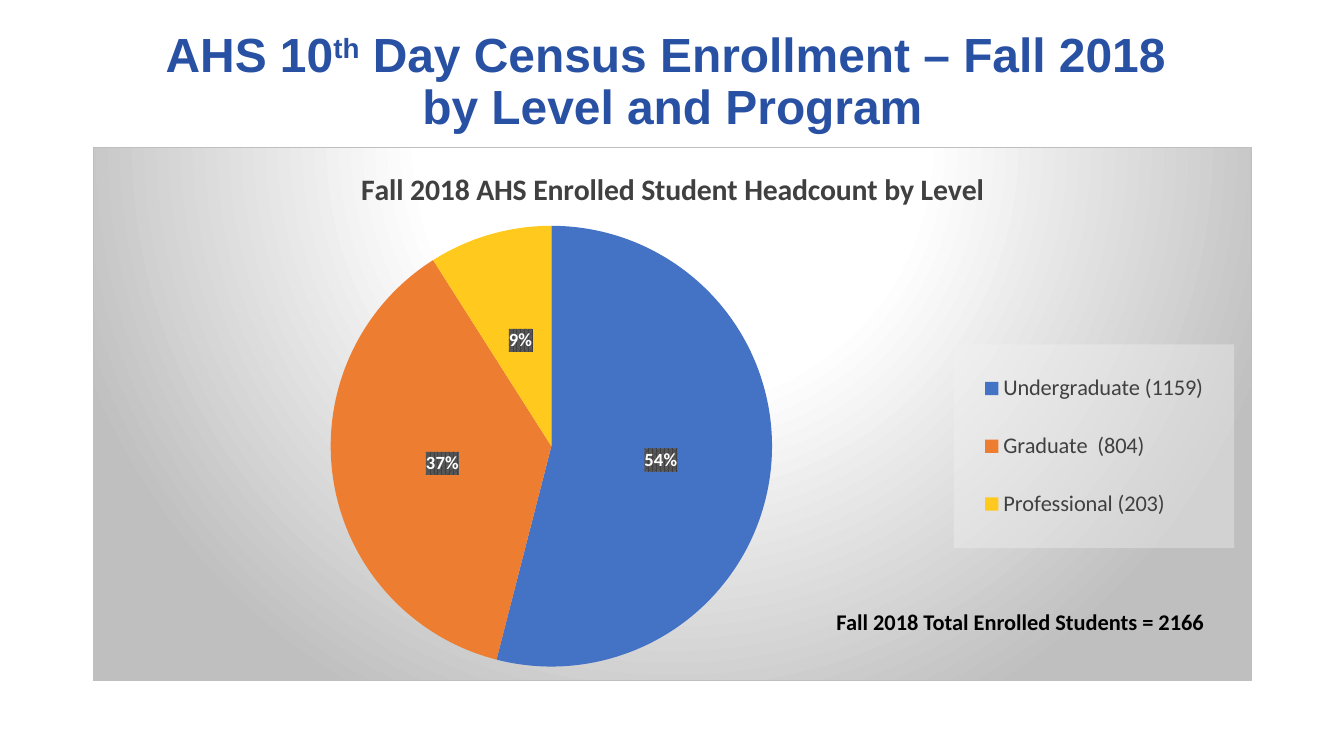
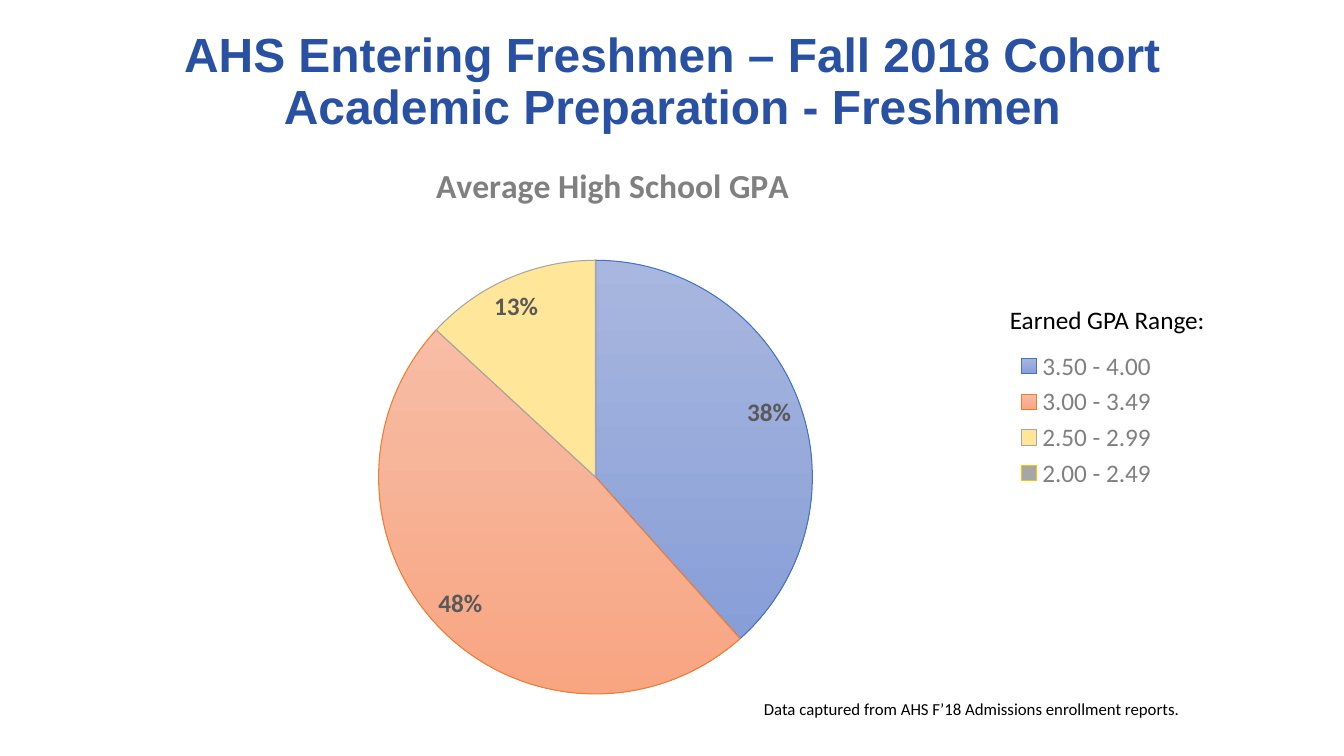
from dataclasses import dataclass
from typing import Optional

from lxml import etree
from pptx import Presentation
from pptx import util as u
from pptx.chart import data as cd
from pptx.dml import color as dc
from pptx.enum import chart as ec, text as et

WIDE, HIGH = u.Inches(13.33), u.Inches(7.5)
HUES = {
    "title": "2850A3", "black": "000000", "white": "FFFFFF", "dark": "404040",
    "slate": "595959", "gray": "808080", "ash": "A6A6A6", "steel": "A5A5A5",
    "silver": "BFBFBF", "mist": "F2F2F2", "blue": "4472C4", "orange": "ED7D31",
    "yellow": "FFC91D", "gold": "FFC000", "cream": "FFE699",
    "sky": "A8B7DF", "dusk": "889ED7", "blush": "F7BDA5", "coral": "F8A582",
}
SPACES = ('xmlns:c="http://schemas.openxmlformats.org/drawingml/2006/chart" '
          'xmlns:a="http://schemas.openxmlformats.org/drawingml/2006/main"')


@dataclass(frozen=True)
class Box:
    """Left, top, width and height in percent of the host's size."""
    x: float
    y: float
    w: float
    h: float

    def spot(self) -> tuple[int, int, int, int]:
        return (int(WIDE * self.x / 100), int(HIGH * self.y / 100),
                int(WIDE * self.w / 100), int(HIGH * self.h / 100))


@dataclass(frozen=True)
class Type:
    size: float
    hue: str
    bold: bool = False
    face: str = "Calibri"


@dataclass(frozen=True)
class Slice:
    name: str
    value: int
    fill: tuple[str, ...]
    edge: Optional[str] = None


@dataclass(frozen=True)
class Pie:
    box: Box
    title: str
    head: Type
    slices: tuple[Slice, ...]
    plot: Box
    key: Box
    legend: Type
    label: Type
    place: ec.XL_LABEL_POSITION
    top: Optional[Box] = None
    shaded: bool = False


@dataclass(frozen=True)
class Note:
    box: Box
    words: str
    type: Type


@dataclass(frozen=True)
class Page:
    title: tuple[tuple[str, bool], ...]
    pie: Pie
    notes: tuple[Note, ...]


TITLE_BOX = Box(6.9, 5.33, 86.27, 11.33)
TITLE_TYPE = Type(34.2, "title", True, "Arial")

PAGES = (
    Page(
        (("AHS 10", False), ("th", True),
         (" Day Census Enrollment – Fall 2018 \vby Level and Program", False)),
        Pie(
            Box(6.9, 19.47, 86.27, 70.67),
            "Fall 2018 AHS Enrolled Student Headcount by Level",
            Type(21.3, "dark", True),
            (Slice("Undergraduate (1159)", 54, ("blue",)),
             Slice("Graduate  (804)", 37, ("orange",)),
             Slice("Professional (203)", 9, ("yellow",))),
            plot=Box(20.5, 14.6, 38.1, 82.8),
            key=Box(74.3, 36.9, 24.2, 38.2),
            legend=Type(16, "dark"),
            label=Type(13.3, "white", True),
            place=ec.XL_LABEL_POSITION.CENTER,
            shaded=True),
        (Note(Box(61.5, 79.73, 30.75, 4.93),
              "Fall 2018 Total Enrolled Students = 2166", Type(16, "black", True)),)),
    Page(
        (("AHS Entering Freshmen – Fall 2018 Cohort Academic Preparation - Freshmen",
          False),),
        Pie(
            Box(7.28, 18.8, 85.52, 74.8),
            "Average High School GPA",
            Type(24, "gray", True),
            (Slice("3.50 - 4.00", 38, ("sky", "dusk"), "blue"),
             Slice("3.00 - 3.49", 48, ("blush", "coral"), "orange"),
             Slice("2.50 - 2.99", 13, ("cream",), "steel"),
             Slice("2.00 - 2.49", 0, ("ash",), "gold")),
            plot=Box(24.4, 20.9, 37.8, 76.7),
            key=Box(78.5, 36, 15, 26.2),
            legend=Type(18, "gray"),
            label=Type(18, "slate", True),
            place=ec.XL_LABEL_POSITION.BEST_FIT,
            top=Box(28.9, 2.6, 0, 0)),
        (Note(Box(56.1, 91.73, 33, 4),
              "Data captured from AHS F’18 Admissions enrollment reports.",
              Type(12, "black")),
         Note(Box(74.4, 39.6, 18.3, 9.47), "Earned GPA Range:", Type(18, "black")))),
)


def tint(hue: str) -> dc.RGBColor:
    return dc.RGBColor.from_string(HUES[hue])


def style(font, kind: Type) -> None:
    font.name, font.size, font.bold = kind.face, u.Pt(kind.size), kind.bold
    font.color.rgb = tint(kind.hue)


def paint(body: str):
    return etree.fromstring(f"<c:spPr {SPACES}>{body}</c:spPr>")


def solid(hue: str, alpha: int = 100) -> str:
    return (f'<a:solidFill><a:srgbClr val="{HUES[hue]}">'
            f'<a:alpha val="{alpha * 1000}"/></a:srgbClr></a:solidFill>')


def seat(owner, after: Optional[str], box: Box, inner: bool = False) -> None:
    for old in owner.xpath("c:layout"):
        owner.remove(old)
    parts = [("layoutTarget", "inner")] if inner else []
    parts += [("xMode", "edge"), ("yMode", "edge"), ("x", box.x / 100), ("y", box.y / 100)]
    if box.w:
        parts += [("w", box.w / 100), ("h", box.h / 100)]
    body = "".join(f'<c:{tag} val="{val}"/>' for tag, val in parts)
    node = etree.fromstring(
        f"<c:layout {SPACES}><c:manualLayout>{body}</c:manualLayout></c:layout>")
    owner.insert(owner.index(owner.xpath(after)[0]) + 1 if after else 0, node)


def shade(root) -> None:
    stops = "".join(f'<a:gs pos="{at * 1000}"><a:srgbClr val="{HUES[hue]}"/></a:gs>'
                    for at, hue in ((0, "white"), (39, "white"), (100, "silver")))
    root.xpath("c:chart")[0].addnext(paint(
        f'<a:gradFill><a:gsLst>{stops}</a:gsLst><a:path path="circle">'
        '<a:fillToRect l="50000" t="-80000" r="50000" b="180000"/></a:path></a:gradFill>'
        f'<a:ln w="9525">{solid("silver")}</a:ln>'))
    root.xpath(".//c:legend/c:overlay")[0].addnext(paint(solid("mist", 39)))
    root.xpath(".//c:dLbls/c:txPr")[0].addprevious(paint(
        f'<a:pattFill prst="pct75"><a:fgClr><a:srgbClr val="{HUES["dark"]}"/></a:fgClr>'
        f'<a:bgClr><a:srgbClr val="{HUES["slate"]}"/></a:bgClr></a:pattFill>'))


def color(point, part: Slice) -> None:
    fill, line = point.format.fill, point.format.line
    if len(part.fill) > 1:
        fill.gradient()
        fill.gradient_angle = 270
        for stop, hue in zip(fill.gradient_stops, part.fill):
            stop.color.rgb = tint(hue)
    else:
        fill.solid()
        fill.fore_color.rgb = tint(part.fill[0])
    if part.edge:
        line.color.rgb = tint(part.edge)
        line.width = u.Pt(0.75)
    else:
        line.fill.background()


def draw_pie(slide, pie: Pie) -> None:
    data = cd.CategoryChartData()
    data.categories = [part.name for part in pie.slices]
    data.add_series("Series 1", [part.value for part in pie.slices])
    chart = slide.shapes.add_chart(ec.XL_CHART_TYPE.PIE, *pie.box.spot(), data).chart
    style(chart.font, Type(10, "black"))

    head = chart.chart_title.text_frame.paragraphs[0]
    head.text = pie.title
    style(head.font, pie.head)
    chart.chart_title.include_in_layout = False

    chart.has_legend = True
    chart.legend.position = ec.XL_LEGEND_POSITION.RIGHT
    chart.legend.include_in_layout = False
    style(chart.legend.font, pie.legend)

    plot = chart.plots[0]
    plot.vary_by_categories = True
    row = plot.series[0]
    for i, part in enumerate(pie.slices):
        color(row.points[i], part)
    labels = row.data_labels
    labels.show_percentage, labels.show_value = True, False
    labels.number_format, labels.number_format_is_linked = "0%", False
    labels.position = pie.place
    style(labels.font, pie.label)

    root = chart._chartSpace
    seat(root.xpath(".//c:plotArea")[0], None, pie.plot, True)
    seat(root.xpath(".//c:legend")[0], "c:legendPos", pie.key)
    if pie.top:
        seat(root.xpath("c:chart/c:title")[0], "c:tx", pie.top)
    if pie.shaded:
        shade(root)


def draw_title(slide, runs: tuple[tuple[str, bool], ...]) -> None:
    shape = slide.shapes.title
    shape.left, shape.top, shape.width, shape.height = TITLE_BOX.spot()
    frame = shape.text_frame
    frame.auto_size, frame.word_wrap = et.MSO_AUTO_SIZE.NONE, True
    frame.vertical_anchor = et.MSO_ANCHOR.MIDDLE
    para = frame.paragraphs[0]
    para.alignment, para.line_spacing = et.PP_ALIGN.CENTER, 0.9
    style(para.font, TITLE_TYPE)
    for words, raised in runs:
        for i, line in enumerate(words.split("\v")):
            if i:
                para.add_line_break()
            run = para.add_run()
            run.text = line
            if raised:
                run.font._element.set("baseline", "30000")


def draw_note(slide, note: Note) -> None:
    frame = slide.shapes.add_textbox(*note.box.spot()).text_frame
    frame.word_wrap = True
    para = frame.paragraphs[0]
    para.text = note.words
    style(para.font, note.type)


def main() -> None:
    deck = Presentation()
    deck.slide_width, deck.slide_height = WIDE, HIGH
    for page in PAGES:
        slide = deck.slides.add_slide(deck.slide_layouts[5])
        draw_title(slide, page.title)
        draw_pie(slide, page.pie)
        for note in page.notes:
            draw_note(slide, note)
    deck.save("out.pptx")


if __name__ == "__main__":
    main()
